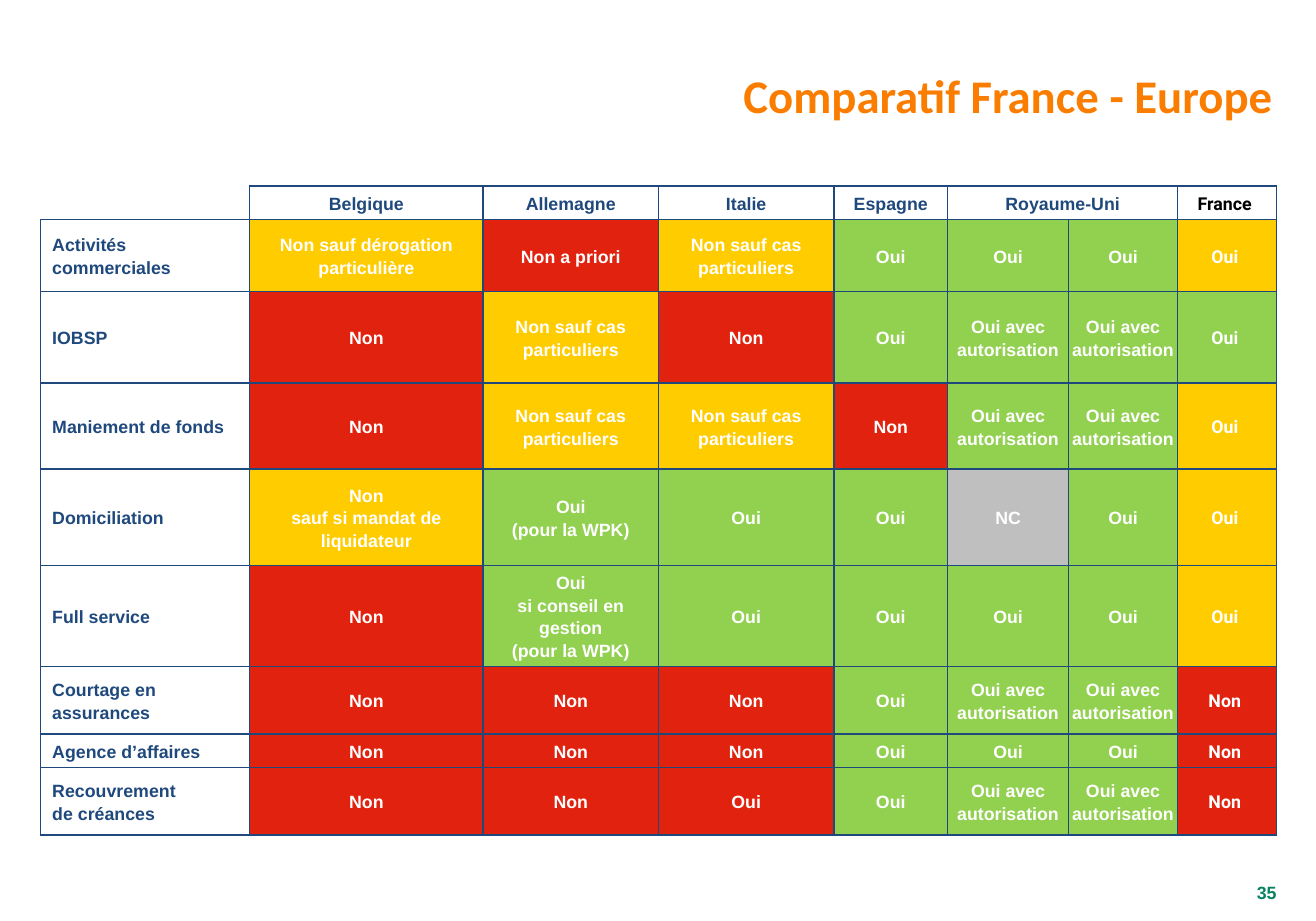
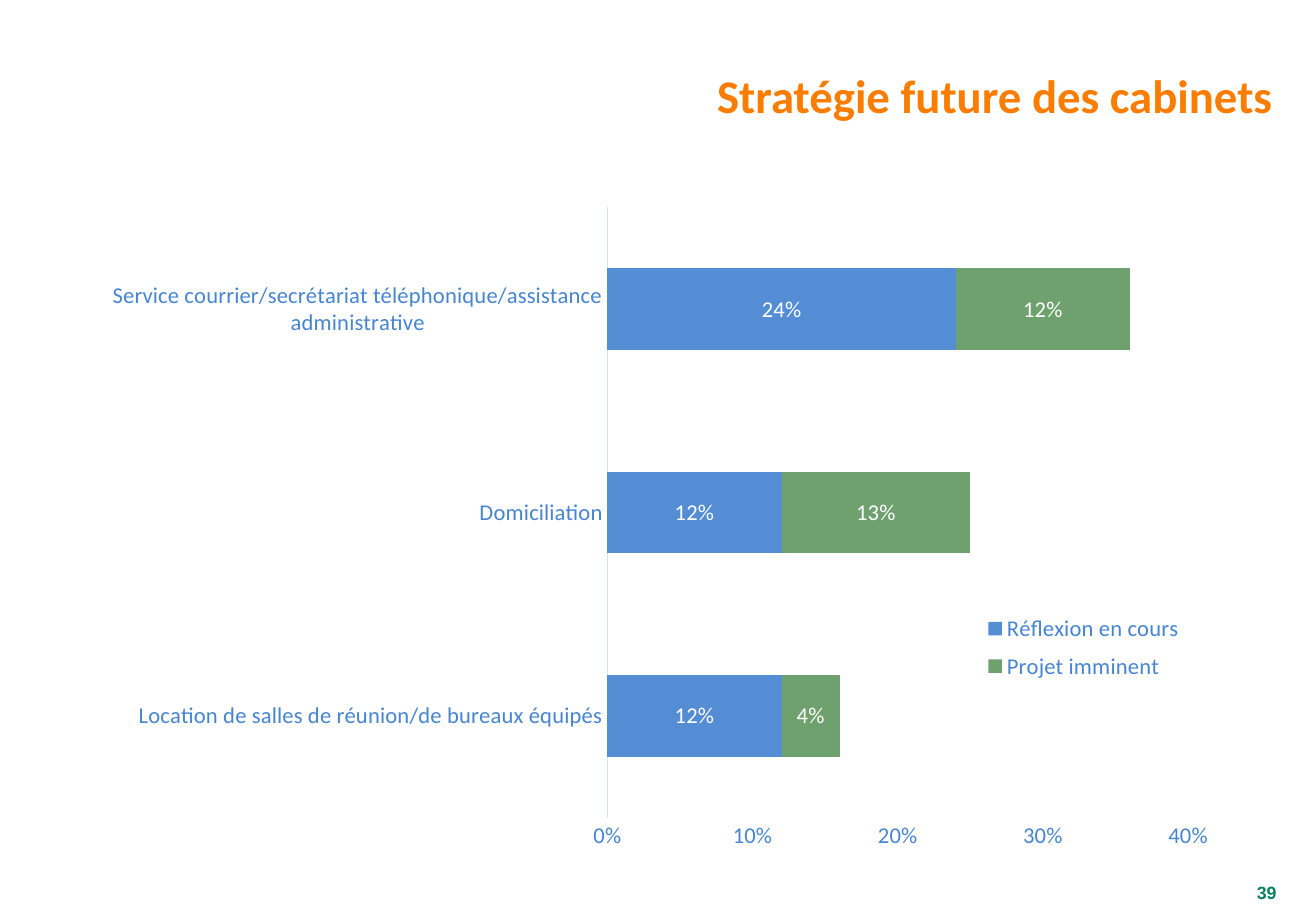
from copy import deepcopy
from lxml.etree import SubElement as Sub
from pptx import Presentation
from pptx.chart.data import CategoryChartData as ChartData
from pptx.dml.color import RGBColor
from pptx.enum.chart import XL_CHART_TYPE as Kind, XL_LABEL_POSITION as Spot
from pptx.enum.chart import XL_LEGEND_POSITION as Side, XL_TICK_MARK as Tick
from pptx.enum.text import MSO_ANCHOR as Anchor, MSO_AUTO_SIZE as Fit, PP_ALIGN as Align
from pptx.oxml.ns import qn
from pptx.util import Inches, Pt

NAVY, ORANGE, GREEN, WHITE = "1F497D", "FA7D00", "098163", "FFFFFF"
SKY, PALE = "4785D1", "D4E3F4"
FILLS = {"R": "E0220E", "Y": "FFCC00", "G": "92D050", "N": "BFBFBF"}

WIDTHS = [1.8, 2.01, 1.51, 1.51, 0.98, 1.04, 0.94, 0.85]
HEIGHTS = [0.29, 0.62, 0.79, 0.74, 0.83, 0.87, 0.58, 0.29, 0.58]
HEADS = ["", "Belgique", "Allemagne", "Italie", "Espagne", "Royaume-Uni", "", "France "]
NO, YES, CASE, AUTH = "R:Non", "G:Oui", "Y:Non sauf cas particuliers", "G:Oui avec autorisation"
# Each answer is a fill key, a colon and the text
ROWS = [
    ("Activités commerciales", "Y:Non sauf dérogation particulière", "R:Non a priori", CASE,
     YES, YES, YES, "Y:Oui "),
    ("IOBSP", NO, CASE, NO, YES, AUTH, AUTH, "G:Oui "),
    ("Maniement de fonds", NO, CASE, CASE, NO, AUTH, AUTH, "Y:Oui "),
    ("Domiciliation", "Y:Non\nsauf si mandat de liquidateur", "G:Oui\n(pour la WPK)",
     YES, YES, "N:NC", YES, "Y:Oui "),
    ("Full service", NO, "G:Oui\nsi conseil en gestion\n(pour la WPK)",
     YES, YES, YES, YES, "Y:Oui "),
    ("Courtage en assurances", NO, NO, NO, YES, AUTH, AUTH, "R:Non "),
    ("Agence d’affaires", NO, NO, NO, YES, YES, YES, "R:Non "),
    ("Recouvrement \nde créances", NO, NO, "R:Oui", YES, AUTH, AUTH, "R:Non "),
]
CATS = ["Location de salles de réunion/de bureaux équipés", "Domiciliation",
        "Service courrier/secrétariat téléphonique/assistance administrative"]
SERIES = [("Réflexion en cours", (0.12, 0.12, 0.24), "548DD4"),
          ("Projet imminent", (0.04, 0.13, 0.12), "6FA16F")]


def rgb(code):
    return RGBColor.from_string(code)


def style(font, size, face, color, bold=False):
    font.size, font.name, font.bold = Pt(size), face, bold
    font.color.rgb = rgb(color)


def pad(part, wide, high):
    """Set the margins of a text frame or a table cell."""
    part.margin_left = part.margin_right = Inches(wide)
    part.margin_top = part.margin_bottom = Inches(high)


def write(frame, text, size=11, face="Arial", color=NAVY, bold=True, align=Align.LEFT,
          gap=None, lines=None, indent=0):
    """Fill a text frame with one paragraph; newlines become line breaks."""
    para = frame.paragraphs[0]
    para.alignment = align
    if gap is not None:
        para.space_before = para.space_after = Pt(gap)
    if lines:
        para.line_spacing = lines
    if indent:
        props = para._p.get_or_add_pPr()
        props.set("marL", str(Inches(indent)))
        props.set("indent", "0")
    for i, part in enumerate(text.split("\n")):
        if i:
            para.add_line_break()
        run = para.add_run()
        run.text = part
        style(run.font, size, face, color, bold)
    for br in para._p.findall(qn("a:br")):
        br.append(deepcopy(run._r.rPr))


def border(cell, sides):
    """Draw navy lines on the named sides and clear the others."""
    props = cell._tc.get_or_add_tcPr()
    for side in "LRTB":
        line = Sub(props, qn("a:ln" + side), w=str(Pt(1)))
        if side in sides:
            fill = Sub(line, qn("a:solidFill"))
            Sub(fill, qn("a:srgbClr"), val=NAVY)
        else:
            Sub(line, qn("a:noFill"))


def place(node, spot, index, inner=False):
    """Give a chart part a fixed place, in shares of the chart."""
    for old in node.findall(qn("c:layout")):
        node.remove(old)
    layout = Sub(node, qn("c:layout"))
    node.insert(index, layout)
    manual = Sub(layout, qn("c:manualLayout"))
    if inner:
        Sub(manual, qn("c:layoutTarget"), val="inner")
    for key in "xy":
        Sub(manual, qn(f"c:{key}Mode"), val="edge")
    for key, val in zip("xywh", spot):
        Sub(manual, qn("c:" + key), val=str(val))


class Deck:
    def __init__(self):
        self.prs = Presentation()
        self.prs.slide_width, self.prs.slide_height = Inches(11.33), Inches(7.93)
        self.slide = None

    def page(self, title, number):
        """Start a slide with its title and page number."""
        self.slide = self.prs.slides.add_slide(self.prs.slide_layouts[5])
        head = self.slide.shapes.title
        head.left, head.top = Inches(0.48), Inches(0.32)
        head.width, head.height = Inches(10.59), Inches(1)
        frame = head.text_frame
        frame.auto_size, frame.vertical_anchor = Fit.NONE, Anchor.MIDDLE
        pad(frame, 0.11, 0.05)
        write(frame, title, size=29, face="Calibri", color=ORANGE, align=Align.RIGHT)
        box = self.slide.shapes.add_textbox(Inches(10.01), Inches(7.54), Inches(1.09), Inches(0.29))
        box.text_frame.word_wrap = True
        pad(box.text_frame, 0.11, 0.05)
        write(box.text_frame, str(number), color=GREEN, align=Align.RIGHT)

    def cell(self, cell, text, fill=None, sides="LRTB", **form):
        border(cell, sides)
        if fill:
            cell.fill.solid()
            cell.fill.fore_color.rgb = rgb(fill)
        else:
            cell.fill.background()
        cell.vertical_anchor = Anchor.MIDDLE
        pad(cell, 0.02, 0)
        if text:
            write(cell.text_frame, text, gap=3, lines=1.15, **form)
        else:
            # An empty cell must not stretch its row
            Sub(cell.text_frame.paragraphs[0]._p, qn("a:endParaRPr"), sz="1100")

    def table(self, left, top):
        table = self.slide.shapes.add_table(
            len(HEIGHTS), len(WIDTHS), Inches(left), Inches(top),
            Inches(sum(WIDTHS)), Inches(sum(HEIGHTS))).table
        table.first_row = table.horz_banding = False
        for col, width in zip(table.columns, WIDTHS):
            col.width = Inches(width)
        for row, height in zip(table.rows, HEIGHTS):
            row.height = Inches(height)
        last = len(WIDTHS) - 1
        # Country heads
        for c, text in enumerate(HEADS):
            self.cell(table.cell(0, c), text, sides="LRTB" if c else "RB", align=Align.CENTER,
                      face="Roboto" if c == last else "Arial",
                      color="000000" if c == last else NAVY)
        table.cell(0, 5).merge(table.cell(0, 6))
        # Activities and answers
        for r, (name, *marks) in enumerate(ROWS, 1):
            self.cell(table.cell(r, 0), name, WHITE, indent=0.08)
            for c, mark in enumerate(marks, 1):
                key, text = mark.split(":", 1)
                self.cell(table.cell(r, c), text, FILLS[key], align=Align.CENTER, color=WHITE,
                          face="Roboto" if c == last else "Arial")

    def chart(self, left, top, width, height):
        data = ChartData(number_format="0%")
        data.categories = CATS
        for name, vals, _ in SERIES:
            data.add_series(name, vals)
        chart = self.slide.shapes.add_chart(
            Kind.BAR_STACKED, Inches(left), Inches(top), Inches(width), Inches(height), data).chart
        chart.has_title = False
        style(chart.font, 14, "Calibri", SKY)
        # Bars and labels
        plot = chart.plots[0]
        plot.gap_width, plot.overlap, plot.vary_by_categories = 150, 100, False
        for bar, (_, _, color) in zip(plot.series, SERIES):
            bar.format.fill.solid()
            bar.format.fill.fore_color.rgb = rgb(color)
            tags = bar.data_labels
            tags.show_value, tags.position = True, Spot.CENTER
            tags.number_format, tags.number_format_is_linked = "0%", False
            style(tags.font, 14, "Calibri", WHITE)
        # Axes
        cat, val = chart.category_axis, chart.value_axis
        for axis in (cat, val):
            axis.major_tick_mark = axis.minor_tick_mark = Tick.NONE
            axis.has_major_gridlines = False
        cat.format.line.color.rgb = rgb(PALE)
        cat.format.line.width = Pt(0.75)
        val.format.line.fill.background()
        val.minimum_scale, val.maximum_scale, val.major_unit = 0, 0.4, 0.1
        val.tick_labels.number_format = "0%"
        val.tick_labels.number_format_is_linked = False
        # Legend and plot area
        chart.has_legend = True
        chart.legend.position = Side.BOTTOM
        chart.legend.include_in_layout = False
        root = chart._chartSpace.find(qn("c:chart"))
        place(root.find(qn("c:legend")), (0.78, 0.62, 0.18, 0.12), 1)
        place(root.find(qn("c:plotArea")), (0.46, 0.06, 0.5, 0.86), 0, inner=True)


def main():
    deck = Deck()
    deck.page("Comparatif France - Europe", 35)
    deck.table(0.35, 1.6)
    deck.page("Stratégie future des cabinets", 39)
    deck.chart(0.63, 1.42, 10, 6.11)
    deck.prs.save("out.pptx")


if __name__ == "__main__":
    main()
